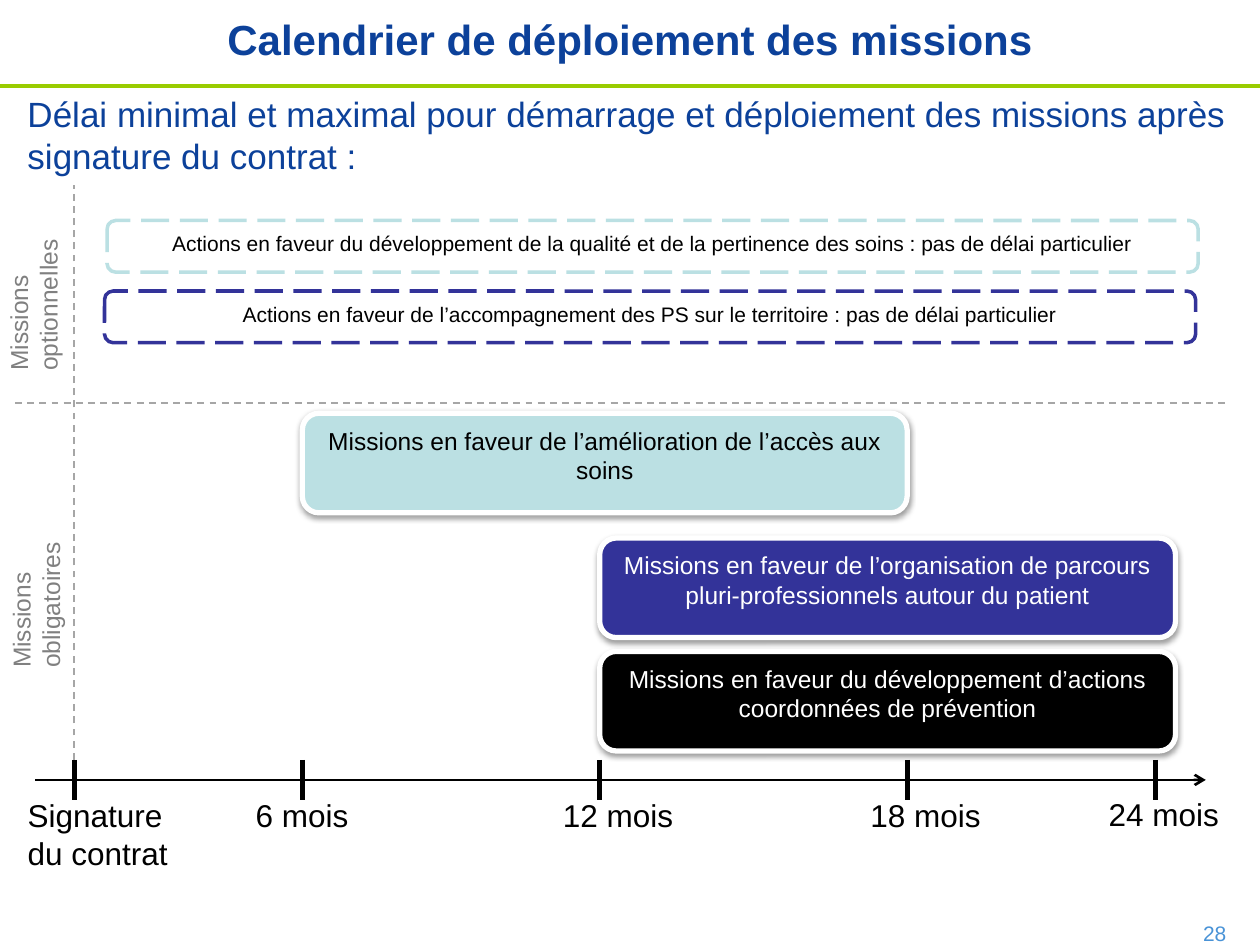
from pptx import Presentation
from pptx.dml.color import RGBColor
from pptx.enum.dml import MSO_LINE
from pptx.enum.shapes import MSO_CONNECTOR, MSO_SHAPE
from pptx.enum.text import MSO_ANCHOR, MSO_AUTO_SIZE, PP_ALIGN
from pptx.oxml import parse_xml
from pptx.oxml.ns import nsdecls
from pptx.util import Inches, Pt

COLUMNS, ROWS = 100, 75

NAVY = RGBColor(0x0C, 0x41, 0x9A)
GREEN = RGBColor(0x99, 0xCC, 0x00)
SKY = RGBColor(0x49, 0x93, 0xD7)
AQUA = RGBColor(0xBB, 0xE0, 0xE3)
INDIGO = RGBColor(0x33, 0x33, 0x99)
BLACK = RGBColor(0x00, 0x00, 0x00)
WHITE = RGBColor(0xFF, 0xFF, 0xFF)
GREY = RGBColor(0x80, 0x80, 0x80)
LIGHT_GREY = RGBColor(0xA6, 0xA6, 0xA6)

SOFT_SHADOW = (
    f'<a:outerShdw {nsdecls("a")} blurRad="{Pt(3.1)}" dist="{Pt(1.6)}" dir="5400000" '
    'rotWithShape="0"><a:srgbClr val="000000"><a:alpha val="38000"/></a:srgbClr>'
    '</a:outerShdw>'
)


class SlideBuilder:
    """Holds the style and the current slide; lengths are grid columns and rows."""

    font = "Arial"

    def __init__(self, deck):
        self.column = deck.slide_width / COLUMNS
        self.row = deck.slide_height / ROWS
        self.slide = deck.slides.add_slide(deck.slide_layouts[5])

    def place(self, *lengths):
        units = (self.column, self.row) * 2
        return [round(length * unit) for length, unit in zip(lengths, units)]

    def fill_frame(self, frame, text, size, color, bold=False, align=PP_ALIGN.LEFT,
                   anchor=MSO_ANCHOR.TOP):
        frame.text = text
        frame.word_wrap = True
        frame.vertical_anchor = anchor
        paragraph = frame.paragraphs[0]
        paragraph.alignment = align
        font = paragraph.runs[0].font
        font.name, font.size, font.bold = self.font, Pt(size), bold
        font.color.rgb = color

    def title(self, text, box):
        title = self.slide.shapes.title
        title.left, title.top, title.width, title.height = self.place(*box)
        self.fill_frame(title.text_frame, text, 24, NAVY, True, PP_ALIGN.CENTER,
                        MSO_ANCHOR.MIDDLE)
        title.text_frame.auto_size = MSO_AUTO_SIZE.NONE

    def text(self, text, box, size, color, anchor=MSO_ANCHOR.TOP, upward=False):
        frame = self.slide.shapes.add_textbox(*self.place(*box)).text_frame
        self.fill_frame(frame, text, size, color, anchor=anchor)
        if upward:
            frame._txBody.bodyPr.set("vert", "vert270")

    def line(self, start, end, color, width, dash=None, arrow=False):
        connector = self.slide.shapes.add_connector(
            MSO_CONNECTOR.STRAIGHT, *self.place(*start, *end))
        connector.line.color.rgb = color
        connector.line.width = Pt(width)
        if dash:
            connector.line.dash_style = dash
        if arrow:
            connector.line._get_or_add_ln().append(
                parse_xml(f'<a:tailEnd {nsdecls("a")} type="arrow"/>'))
        connector._element.spPr.append(parse_xml(f'<a:effectLst {nsdecls("a")}/>'))

    def bar(self, text, box, size, color, fill, outline, width, dash=None, shadow=False):
        bar = self.slide.shapes.add_shape(MSO_SHAPE.ROUNDED_RECTANGLE, *self.place(*box))
        bar.fill.solid()
        bar.fill.fore_color.rgb = fill
        bar.line.color.rgb = outline
        bar.line.width = Pt(width)
        if dash:
            bar.line.dash_style = dash
        bar.shadow.inherit = False
        if shadow:
            bar._element.spPr.effectLst.append(parse_xml(SOFT_SHADOW))
        frame = bar.text_frame
        frame.margin_left = frame.margin_right = Inches(0.11)
        frame.margin_top = frame.margin_bottom = Inches(0.06)
        self.fill_frame(frame, text, size, color, align=PP_ALIGN.CENTER)


def main():
    deck = Presentation()
    deck.slide_width, deck.slide_height = Inches(10), Inches(7.5)
    calendar = SlideBuilder(deck)

    # Heading
    calendar.line((0, 6.8), (COLUMNS, 6.8), GREEN, 2.25)
    calendar.title("Calendrier de déploiement des missions", (0, 0, COLUMNS, 6.1))
    calendar.text("Délai minimal et maximal pour démarrage et déploiement des missions "
                  "après signature du contrat :", (1.2, 7.6, COLUMNS, 6.1), 20, NAVY,
                  MSO_ANCHOR.MIDDLE)
    calendar.text("28", (94.5, 72.6, 5.5, 2.4), 12, SKY)

    # Time axis: label, tick column, label column, label row, label width
    signature, month_6, month_12, month_18, month_24 = 5.9, 24, 47.6, 72, 91.7
    axis, tick = 61.9, 1.6
    milestones = [
        ("Signature du contrat", signature, 1.2, 62.7, 14.2),
        ("6 mois", month_6, 19.3, 62.7, 12.6),
        ("12 mois", month_12, 43.7, 62.7, 12.6),
        ("18 mois", month_18, 68.1, 62.7, 12.6),
        ("24 mois", month_24, 87, 62.6, 12.6),
    ]
    calendar.line((2.8, axis), (95.7, axis), BLACK, 1.5, arrow=True)
    for label, column, left, top, width in milestones:
        calendar.line((column, axis - tick), (column, axis + tick), BLACK, 3)
        calendar.text(label, (left, top, width, 4), 18, BLACK)

    # Mandatory missions
    mandatory = [
        ("Missions en faveur de l’amélioration de l’accès aux soins",
         month_6, 32.8, month_18 - month_6, AQUA, BLACK),
        ("Missions en faveur de l’organisation de parcours pluri-professionnels "
         "autour du patient", month_12, 42.7, 45.7, INDIGO, WHITE),
        ("Missions en faveur du développement d’actions coordonnées de prévention",
         month_12, 51.7, 45.7, BLACK, WHITE),
    ]
    for mission, left, top, width, fill, color in mandatory:
        calendar.bar(mission, (left, top, width, 7.9), 14, color, fill, WHITE, 3, shadow=True)

    # Dashed separators
    calendar.line((1.2, 32), (97.2, 32), LIGHT_GREY, 1, MSO_LINE.DASH)
    calendar.line((signature, axis - tick), (signature, 14.7), LIGHT_GREY, 1, MSO_LINE.DASH)

    # Optional missions
    optional = [
        ("Actions en faveur du développement de la qualité et de la pertinence des soins : "
         "pas de délai particulier", 8.5, 17.5, AQUA),
        ("Actions en faveur de l’accompagnement des PS sur le territoire : "
         "pas de délai particulier", 8.3, 23.1, INDIGO),
    ]
    for mission, left, top, outline in optional:
        calendar.bar(mission, (left, top, 86.6, 4.1), 12, BLACK, WHITE, outline, 2,
                     MSO_LINE.LONG_DASH)

    # Row headings
    for heading, left, top in [("Missions optionnelles", -0.2, 13.9),
                               ("Missions obligatoires", 0, 37.5)]:
        calendar.text(heading, (left, top, 6.7, 16.5), 14, GREY, upward=True)

    deck.save("out.pptx")


if __name__ == "__main__":
    main()
